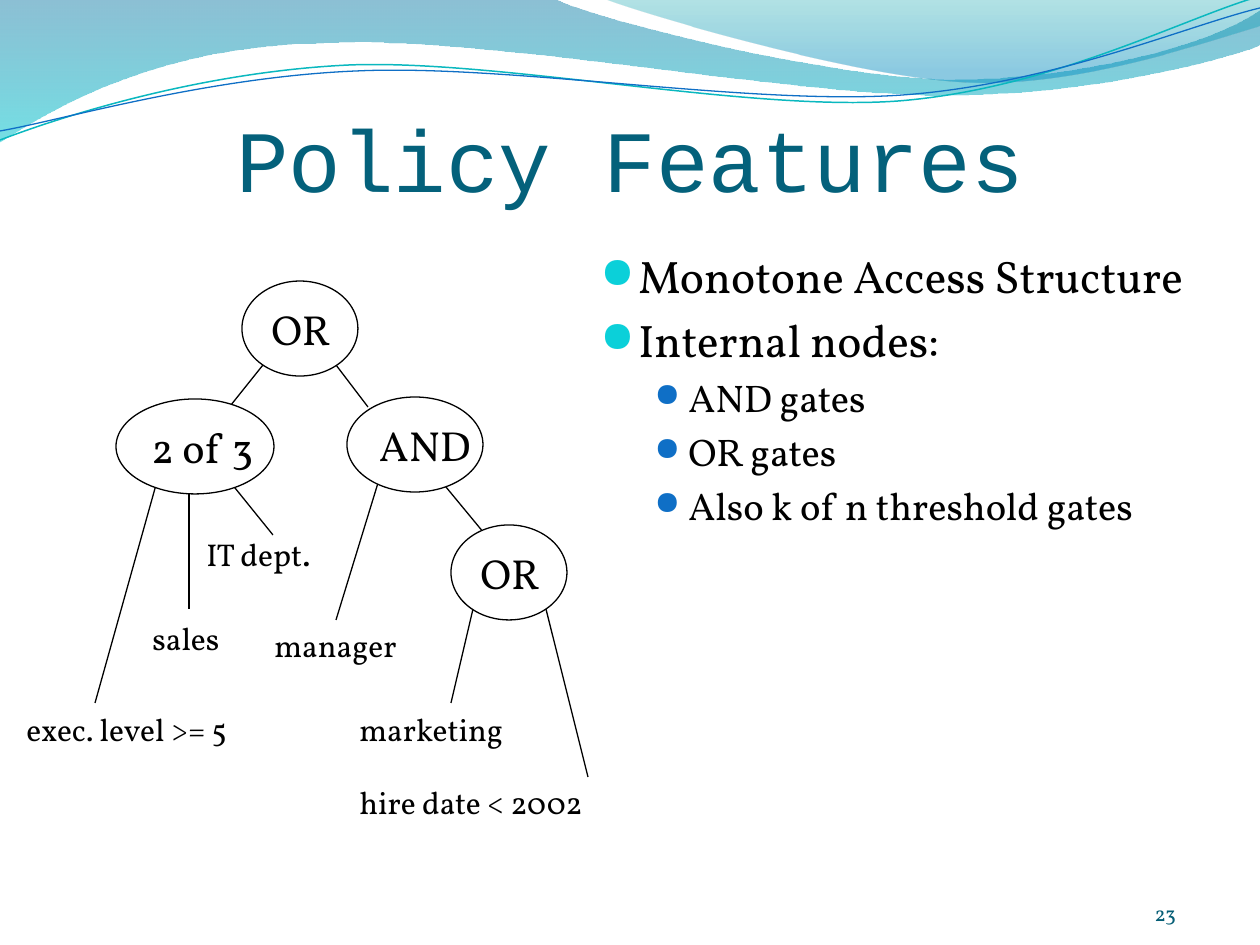
from lxml.etree import SubElement
from pptx import Presentation
from pptx.dml.color import RGBColor
from pptx.enum.shapes import MSO_CONNECTOR, MSO_SHAPE
from pptx.enum.text import MSO_ANCHOR, MSO_AUTO_SIZE, PP_ALIGN
from pptx.oxml.ns import qn
from pptx.util import Emu, Pt

EMU_PER_PX = 914400 / 126
SERIF = "Vollkorn"
BLACK = "000000"

BANDS = [
    ((0, 0), [
        [(554, -1)],
        [(600, 21), (837, 79), (955, 79)],
        [(1075, 79), (1207, 47), (1260, 11)],
        [(1261, 45)],
        [(1239, 55), (1096, 96), (940, 95)],
        [(784, 95), (481, 35), (324, 43)],
        [(163, 45), (58, 105), (-1, 142)],
    ], [("0074A1", 0, 45), ("00C6CF", 1, 55)]),
    ((604, -1), [
        [(641, 14), (859, 78), (969, 82)],
        [(1079, 87), (1211, 40), (1260, 26)],
        [(1260, 0)],
    ], [("00A1A9", 0, 30), ("008BBF", 0.8, 45)]),
]
RIBBONS = [
    ((0, 140), [
        [(60, 117), (199, 72), (349, 65)],
        [(498, 59), (747, 112), (898, 101)],
        [(1050, 89), (1182, 19), (1257, -3)],
    ], "0AB8BF", 0.85),
    ((0, 131), [
        [(59, 121), (207, 77), (357, 71)],
        [(508, 64), (752, 106), (903, 95)],
        [(1053, 84), (1186, 26), (1260, 8)],
    ], "0F6FC6", 0.75),
]
BRANCHES = [
    ((368, 407), (336, 365)),
    ((231, 405), (263, 365)),
    ((95, 703), (156, 485)),
    ((484, 533), (441, 481)),
    ((273, 535), (231, 483)),
    ((336, 620), (378, 483)),
    ((451, 703), (473, 609)),
    ((588, 777), (546, 609)),
    ((189, 609), (189, 494)),
]
GATES = [
    ("OR", (242, 281, 116, 95)),
    ("2 of 3", (116, 399, 158, 95)),
    ("OR", (451, 525, 116, 95)),
    ("AND", (347, 397, 136, 95)),
]
ATTRIBUTES = [
    ([("IT dept", 18), (".", 20)], (194, 525, 152, 54)),
    ([("manager", 18)], (262, 620, 165, 50)),
    ([("marketing", 18)], (347, 704, 186, 50)),
    ([("hire date < 2002", 18)], (347, 777, 296, 50)),
    ([("sales", 18)], (140, 613, 105, 50)),
    ([("exec. level >= 5", 18)], (14, 704, 289, 50)),
]
FEATURES = [
    ("Monotone Access Structure", 0),
    ("Internal nodes:", 0),
    ("AND gates", 1),
    ("OR gates", 1),
    ("Also k of n threshold gates", 1),
]
LEVELS = [
    {"size": 26, "margin": 38, "hang": 38, "bullet": "0BD0D9", "percent": 95},
    {"size": 22, "margin": 88, "hang": 34, "bullet": "0F6FC6", "percent": 85},
]


def px(length):
    """Turn pixels into EMU."""
    return Emu(round(length * EMU_PER_PX))


def rgb(value):
    """Turn a hex string into a colour."""
    return RGBColor.from_string(value)


def apply(target, values):
    """Set each attribute of the target from a dict."""
    for name, value in values.items():
        setattr(target, name, value)


def set_line(line, color=BLACK, width=0.75):
    """Give a line its colour and width."""
    line.color.rgb = rgb(color)
    line.width = Pt(width)


def add_outline(slide, start, segments, close):
    """Draw a freeform of straight and cubic segments."""
    builder = slide.shapes.build_freeform(*start, scale=EMU_PER_PX)
    builder.add_line_segments(
        [point for segment in segments for point in segment], close=close)
    outline = builder.convert_to_shape()
    outline.shadow.inherit = False
    steps = iter(list(outline._element.iter(qn("a:lnTo"))))
    for segment in segments:
        first, *others = [next(steps) for _ in segment]
        if others:
            first.tag = qn("a:cubicBezTo")
        for step in others:
            first.append(step[0])
            step.getparent().remove(step)
    return outline


def add_band(slide, start, segments, stops):
    """Draw a translucent band that fades from top to bottom."""
    band = add_outline(slide, start, segments, True)
    band.line.fill.background()
    band.fill.gradient()
    band.fill.gradient_angle = 270
    for stop, (color, position, _) in zip(band.fill.gradient_stops, stops):
        stop.color.rgb = rgb(color)
        stop.position = position
    colors = band._element.spPr.iter(qn("a:srgbClr"))
    for color, (_, _, opacity) in zip(colors, stops):
        SubElement(color, qn("a:alpha"), val=str(opacity * 1000))


def add_ribbon(slide, start, segments, color, width):
    """Draw an open wavy line."""
    ribbon = add_outline(slide, start, segments, False)
    ribbon.fill.background()
    set_line(ribbon.line, color, width)


def add_run(paragraph, text, size, color=BLACK, font=SERIF):
    """Append a formatted run."""
    run = paragraph.add_run()
    run.text = text
    apply(run.font, {"name": font, "size": Pt(size)})
    run.font.color.rgb = rgb(color)


def add_text(slide, box, runs, color=BLACK, font=SERIF, align=PP_ALIGN.LEFT, **frame):
    """Add a one-paragraph text box."""
    text_frame = slide.shapes.add_textbox(*map(px, box)).text_frame
    apply(text_frame, frame)
    paragraph = text_frame.paragraphs[0]
    paragraph.alignment = align
    for text, size in runs:
        add_run(paragraph, text, size, color, font)


def add_branch(slide, start, end):
    """Draw a straight tree branch."""
    branch = slide.shapes.add_connector(
        MSO_CONNECTOR.STRAIGHT, *map(px, start + end))
    set_line(branch.line)
    SubElement(branch._element.spPr, qn("a:effectLst"))


def add_gate(slide, label, box):
    """Draw an elliptical gate with its label."""
    gate = slide.shapes.add_shape(MSO_SHAPE.OVAL, *map(px, box))
    gate.shadow.inherit = False
    gate.fill.solid()
    gate.fill.fore_color.rgb = rgb("FFFFFF")
    set_line(gate.line)
    apply(gate.text_frame, {"word_wrap": False, "vertical_anchor": MSO_ANCHOR.MIDDLE})
    paragraph = gate.text_frame.paragraphs[0]
    paragraph.alignment = PP_ALIGN.LEFT
    add_run(paragraph, label, 24)


def add_feature_list(slide, box, features):
    """Add the two-level bulleted list."""
    frame = slide.shapes.add_textbox(*map(px, box)).text_frame
    frame.word_wrap = True
    for index, (text, depth) in enumerate(features):
        paragraph = frame.add_paragraph() if index else frame.paragraphs[0]
        level = LEVELS[depth]
        paragraph.level = depth
        add_run(paragraph, text, level["size"])
        properties = paragraph._p.get_or_add_pPr()
        properties.set("marL", str(px(level["margin"])))
        properties.set("indent", str(px(-level["hang"])))
        spacing = SubElement(properties, qn("a:spcBef"))
        SubElement(spacing, qn("a:spcPct"), val="20000")
        bullet_color = SubElement(properties, qn("a:buClr"))
        SubElement(bullet_color, qn("a:srgbClr"), val=level["bullet"])
        SubElement(properties, qn("a:buSzPct"), val=str(level["percent"] * 1000))
        SubElement(properties, qn("a:buFont"), typeface="OpenSymbol")
        SubElement(properties, qn("a:buChar"), char="●")


def main():
    """Build and save the policy features slide."""
    deck = Presentation()
    apply(deck, {"slide_width": px(1260), "slide_height": px(945)})
    slide = deck.slides.add_slide(deck.slide_layouts[6])
    for band in BANDS:
        add_band(slide, *band)
    for ribbon in RIBBONS:
        add_ribbon(slide, *ribbon)
    flush = {"margin_left": 0, "margin_right": 0, "margin_bottom": 0,
             "word_wrap": True, "vertical_anchor": MSO_ANCHOR.BOTTOM}
    add_text(slide, (903, 861, 273, 65), [("23", 12)], "045D75",
             align=PP_ALIGN.RIGHT, margin_top=0, **flush)
    add_text(slide, (79, 42, 1103, 168), [("Policy Features", 50)], "04617B",
             "Courier New", PP_ALIGN.CENTER, margin_top=px(6), **flush)
    add_feature_list(slide, (588, 242, 662, 588), FEATURES)
    for branch in BRANCHES:
        add_branch(slide, *branch)
    for gate in GATES:
        add_gate(slide, *gate)
    for runs, box in ATTRIBUTES:
        add_text(slide, box, runs, word_wrap=False,
                 auto_size=MSO_AUTO_SIZE.SHAPE_TO_FIT_TEXT)
    deck.save("out.pptx")


if __name__ == "__main__":
    main()
